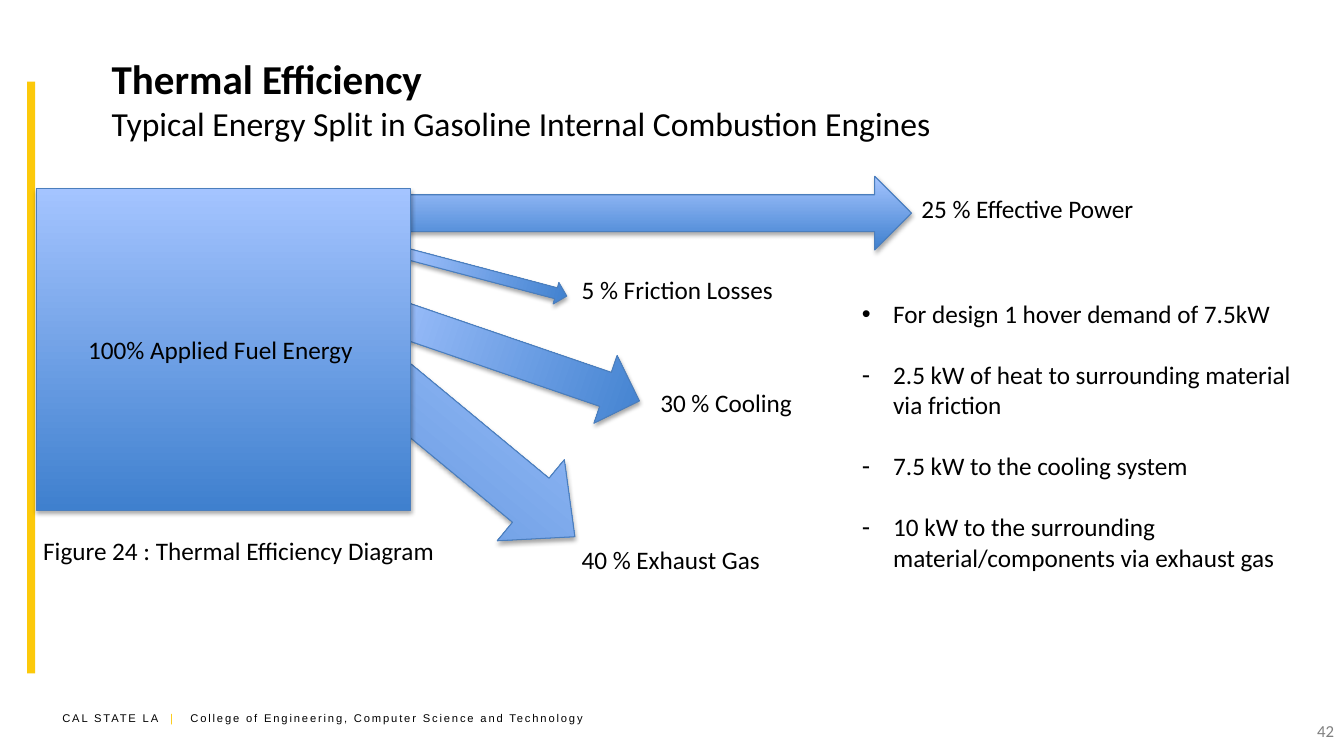
"""Build the thermal efficiency slide with its energy split diagram."""
from dataclasses import dataclass

from lxml import etree
from pptx import Presentation
from pptx import util as u
from pptx.dml.color import RGBColor
from pptx.enum import shapes, text
from pptx.oxml import ns

BLACK, GOLD, GREY = "000000", "FCC90A", "808080"
DARK_BLUE, LIGHT_BLUE, EDGE_BLUE = "3F80CE", "A4C4FF", "4B7EBC"
SHAPE = shapes.MSO_SHAPE
ALIGN = text.PP_ALIGN
ANCHOR = text.MSO_ANCHOR


@dataclass
class Block:
    kind: int
    box: tuple[float, float, float, float]
    rotation: float = 0
    adjustments: tuple[float, ...] = ()
    label: str = ""


@dataclass
class Label:
    words: str
    box: tuple[float, float, float, float]
    size: float = 18
    color: str = BLACK
    align: int = ALIGN.LEFT


BLOCKS = [
    Block(SHAPE.RIGHT_ARROW, (3.94, 1.75, 5.1, 0.73)),
    Block(SHAPE.BENT_ARROW, (2.39, 3.61, 3.3, 2.27), 39.6, (0.25, 0.23, 0.25, 0.44)),
    Block(SHAPE.DOWN_ARROW, (4.71, 2.19, 0.71, 2.7), 288.9),
    Block(SHAPE.DOWN_ARROW, (4.69, 1.87, 0.22, 1.7), 284.8),
    Block(SHAPE.RECTANGLE, (0.36, 1.87, 3.71, 3.19), label="100% Applied Fuel Energy "),
]
LABELS = [
    Label("25 % Effective Power", (9.04, 1.87, 2.56, 0.4)),
    Label("5 % Friction Losses", (5.67, 2.67, 2.18, 0.4)),
    Label("30 % Cooling", (6.45, 3.79, 1.55, 0.4)),
    Label("40 % Exhaust Gas", (5.67, 5.35, 2.03, 0.4)),
    Label("Figure 24 : Thermal Efficiency Diagram", (0.33, 5.26, 4.88, 0.4)),
    Label("42", (10.22, 7.1, 3.11, 0.4), 12, GREY, ALIGN.RIGHT),
]
NOTES = [
    ("•", "For design 1 hover demand of 7.5kW"),
    ("-", "2.5 kW of heat to surrounding material via friction"),
    ("-", "7.5 kW to the cooling system"),
    ("-", "10 kW to the surrounding material/components via exhaust gas"),
]


def rgb(color: str) -> RGBColor:
    return RGBColor.from_string(color)


def inches(box: tuple[float, ...]) -> list[u.Length]:
    return [u.Inches(v) for v in box]


def child(parent, tag: str, **attrs: str):
    return etree.SubElement(parent, ns.qn(tag), attrs)


def set_font(font, size: float, color: str = BLACK, name: str = "Calibri") -> None:
    font.size = u.Pt(size)
    font.name = name
    font.color.rgb = rgb(color)


def add_text_frame(s, box: tuple[float, ...]):
    tf = s.shapes.add_textbox(*inches(box)).text_frame
    tf.word_wrap = True
    return tf


def add_block(s, block: Block) -> None:
    sp = s.shapes.add_shape(block.kind, *inches(block.box))
    sp.rotation = block.rotation
    for i, value in enumerate(block.adjustments):
        sp.adjustments[i] = value
    sp.fill.gradient()
    sp.fill.gradient_angle = 90
    for stop, color in zip(sp.fill.gradient_stops, (DARK_BLUE, LIGHT_BLUE)):
        stop.color.rgb = rgb(color)
    sp.line.color.rgb = rgb(EDGE_BLUE)
    sp.line.width = u.Pt(0.75)
    sp.shadow.inherit = False
    effects = sp._element.spPr.find(ns.qn("a:effectLst"))
    shadow = child(effects, "a:outerShdw", blurRad="40000", dist="23000",
                   dir="5400000", rotWithShape="0")
    child(child(shadow, "a:srgbClr", val=BLACK), "a:alpha", val="35000")
    if block.label:
        tf = sp.text_frame
        tf.vertical_anchor = ANCHOR.MIDDLE
        p = tf.paragraphs[0]
        p.text = block.label
        p.alignment = ALIGN.CENTER
        set_font(p.font, 18)


def add_label(s, label: Label) -> None:
    p = add_text_frame(s, label.box).paragraphs[0]
    p.text = label.words
    p.alignment = label.align
    set_font(p.font, label.size, label.color)


def add_title(s) -> None:
    tf = add_text_frame(s, (1.01, 0.35, 11.64, 1.25))
    tf.vertical_anchor = ANCHOR.MIDDLE
    p = tf.paragraphs[0]
    r = p.add_run()
    r.text = "Thermal Efficiency "
    set_font(r.font, 29.3)
    r.font.bold = True
    p.add_line_break()
    r = p.add_run()
    r.text = "Typical Energy Split in Gasoline Internal Combustion Engines"
    set_font(r.font, 24)


def add_notes_list(s) -> None:
    tf = add_text_frame(s, (8.45, 2.91, 4.55, 2.83))
    for i, (bullet, words) in enumerate(NOTES):
        p = tf.add_paragraph() if i else tf.paragraphs[0]
        p.text = words
        if i:
            p.space_before = u.Pt(22)
        pPr = p._p.get_or_add_pPr()
        indent = u.Inches(0.31)
        pPr.set("marL", str(indent))
        pPr.set("indent", str(-indent))
        child(pPr, "a:buFont", typeface="Arial")
        child(pPr, "a:buChar", char=bullet)
        set_font(p.font, 18)


def add_footer(s) -> None:
    p = add_text_frame(s, (0.52, 7.01, 5.53, 0.24)).paragraphs[0]
    tabs = child(p._p.get_or_add_pPr(), "a:tabLst")
    for position in (1.07, 1.27):
        child(tabs, "a:tab", pos=str(u.Inches(position)), algn="l")
    for words, color in (("CAL STATE LA", BLACK), ("\t|\t", GOLD),
                         ("College of Engineering, Computer Science and Technology", BLACK)):
        r = p.add_run()
        r.text = words
        set_font(r.font, 8, color, "Arial")
        r._r.get_or_add_rPr().set("spc", "130")


def add_side_bar(s) -> None:
    sp = s.shapes.add_shape(SHAPE.RECTANGLE, *inches((0.27, 0.81, 0.08, 5.87)))
    sp.fill.solid()
    sp.fill.fore_color.rgb = rgb(GOLD)
    sp.line.fill.background()
    sp.shadow.inherit = False


def main() -> None:
    prs = Presentation()
    prs.slide_width, prs.slide_height = inches((13.33, 7.5))
    s = prs.slides.add_slide(prs.slide_layouts[6])
    add_footer(s)
    add_side_bar(s)
    add_title(s)
    for block in BLOCKS:
        add_block(s, block)
    for label in LABELS:
        add_label(s, label)
    add_notes_list(s)
    prs.save("out.pptx")


if __name__ == "__main__":
    main()
